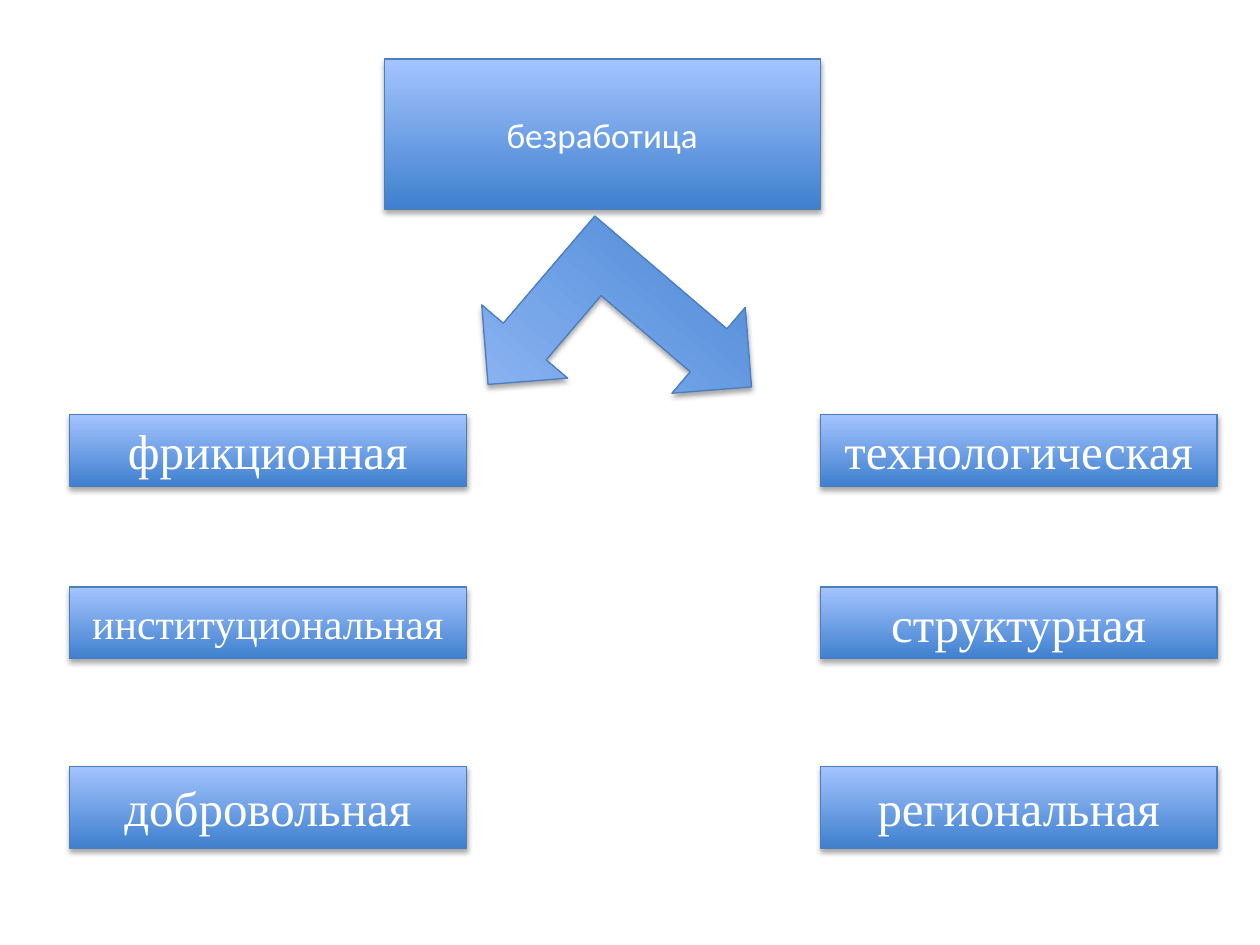
import lxml.etree
import pptx
import pptx.dml.color
import pptx.enum.shapes
import pptx.enum.text
import pptx.oxml.ns
import pptx.util

Pt = pptx.util.Pt
Kind = pptx.enum.shapes.MSO_SHAPE
HUES = {"deep": "3F80CE", "pale": "A4C4FF", "edge": "4B7EBC", "text": "FFFFFF", "shade": "000000"}


def hue(name):
    return pptx.dml.color.RGBColor.from_string(HUES[name])


class Chart:
    """Draws the glossy blue boxes and arrows of a scheme on one slide."""

    def __init__(self, slide):
        self.slide = slide

    def shade(self, shape):
        shape.shadow.inherit = False
        tag = pptx.oxml.ns.qn
        list_ = shape._element.spPr.find(tag("a:effectLst"))
        outer = lxml.etree.SubElement(
            list_, tag("a:outerShdw"), blurRad=str(Pt(3.1)), dist=str(Pt(1.8)),
            dir="5400000", rotWithShape="0")
        tint = lxml.etree.SubElement(outer, tag("a:srgbClr"), val=HUES["shade"])
        lxml.etree.SubElement(tint, tag("a:alpha"), val="35000")

    def shape(self, kind, left, top, width, height):
        shape = self.slide.shapes.add_shape(kind, Pt(left), Pt(top), Pt(width), Pt(height))
        shape.fill.gradient()
        shape.fill.gradient_angle = 90
        for stop, name, place in zip(shape.fill.gradient_stops, ("deep", "pale"), (0, 1)):
            stop.color.rgb = hue(name)
            stop.position = place
        shape.line.color.rgb = hue("edge")
        shape.line.width = Pt(0.75)
        self.shade(shape)
        return shape

    def box(self, text, left, top, width, height, size=28, font="Times New Roman", kind=Kind.RECTANGLE):
        frame = self.shape(kind, left, top, width, height).text_frame
        frame.text = text
        frame.vertical_anchor = pptx.enum.text.MSO_ANCHOR.MIDDLE
        line = frame.paragraphs[0]
        line.alignment = pptx.enum.text.PP_ALIGN.CENTER
        face = line.runs[0].font
        face.name = font
        face.size = Pt(size)
        face.color.rgb = hue("text")

    def fork(self, left, top, width, height, turn):
        self.shape(Kind.LEFT_UP_ARROW, left, top, width, height).rotation = turn


def main():
    deck = pptx.Presentation()
    deck.slide_width, deck.slide_height = Pt(720), Pt(540)
    chart = Chart(deck.slides.add_slide(deck.slide_layouts[6]))

    chart.box("безработица", 219.6, 33.8, 249.1, 85.7, 20, "Calibri", Kind.FLOWCHART_PROCESS)
    chart.fork(278.6, 133.2, 147.6, 128.9, 220.5)

    rows = [(236.9, 41), (335.5, 41), (437.8, 46.8)]
    sides = [
        (39.6, [("фрикционная", 28), ("институциональная", 24), ("добровольная", 28)]),
        (468.7, [("технологическая", 28), ("структурная", 28), ("региональная", 28)]),
    ]
    for left, types in sides:
        for (text, size), (top, height) in zip(types, rows):
            chart.box(text, left, top, 226.8, height, size)

    deck.save("out.pptx")


if __name__ == "__main__":
    main()
